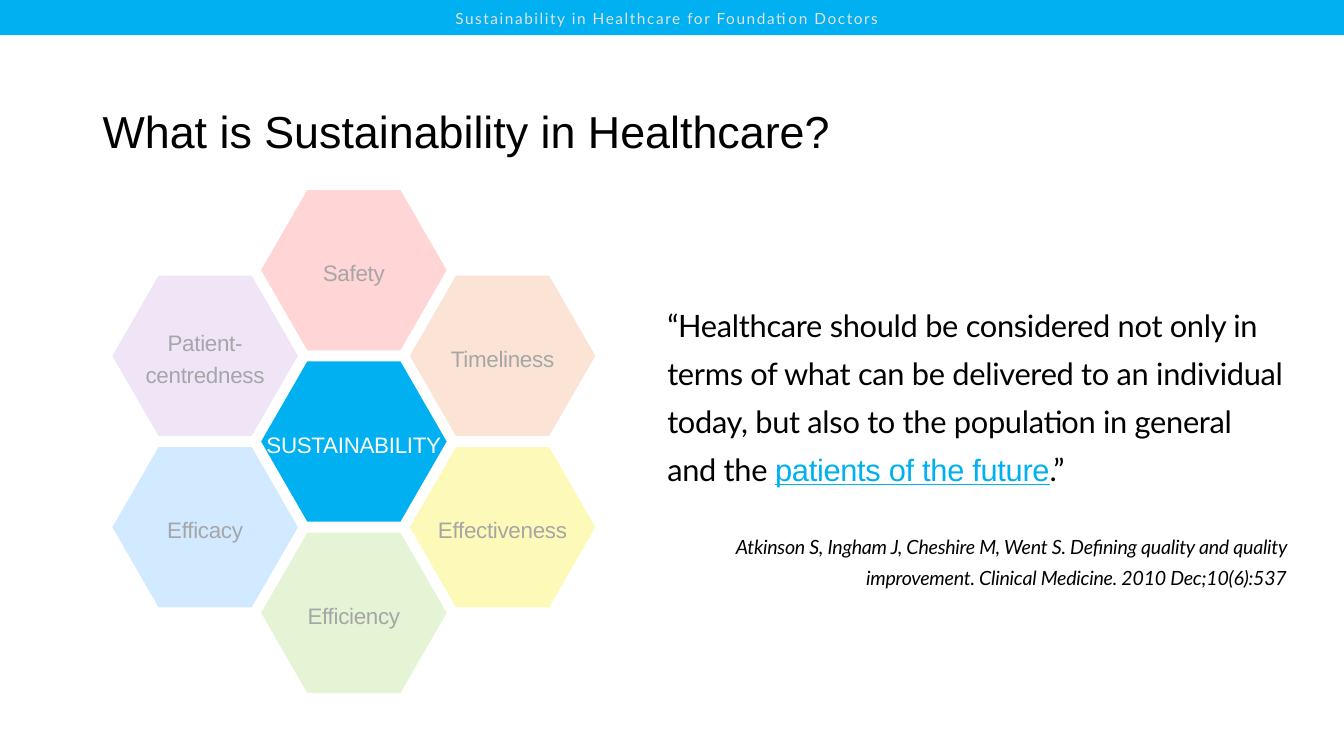
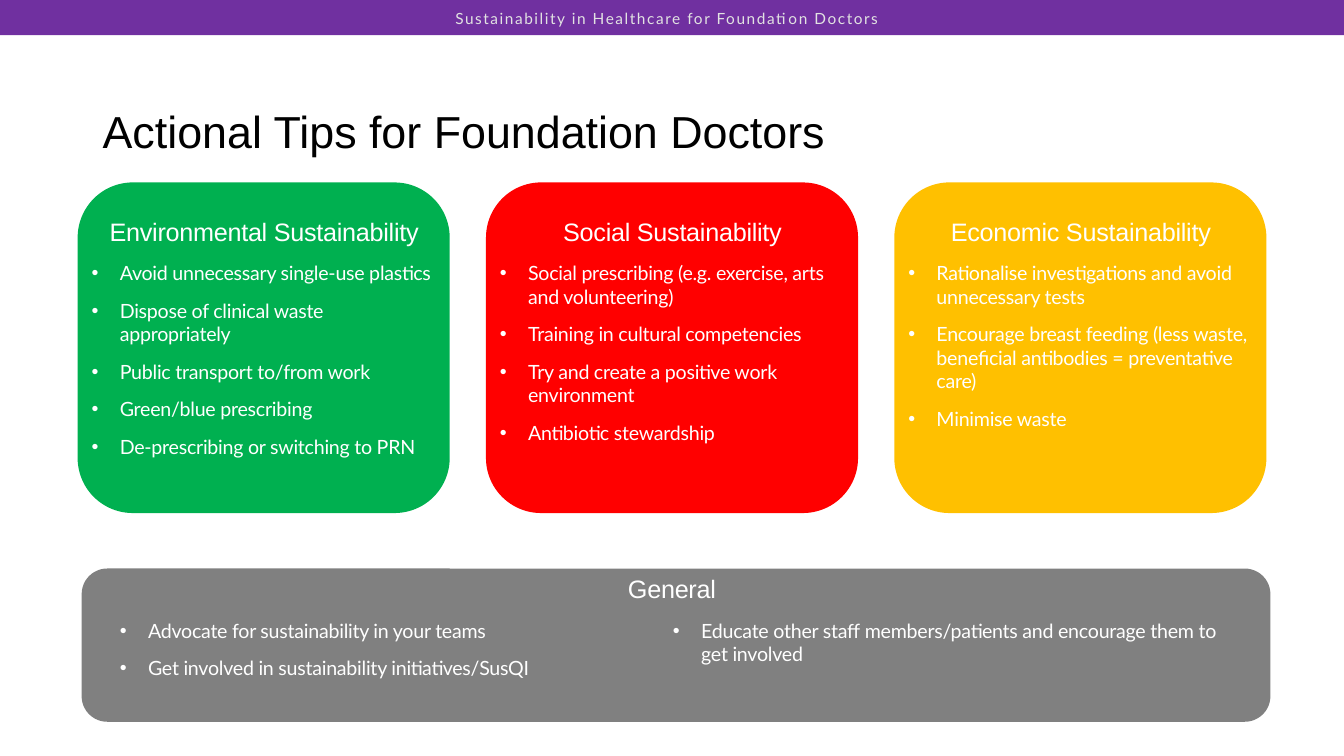
from lxml.etree import SubElement
from pptx import Presentation
from pptx.dml.color import RGBColor
from pptx.enum.shapes import MSO_SHAPE
from pptx.enum.text import MSO_ANCHOR, PP_ALIGN
from pptx.oxml.ns import qn
from pptx.util import Inches, Pt

COLORS = {
    "black": "000000", "white": "FFFFFF", "band_text": "E2E2E2", "label": "A6A6A6",
    "blue": "00B0F0", "purple": "7030A0", "green": "00B050", "red": "FF0000",
    "amber": "FFC000", "grey": "808080", "pale_blue": "D1EAFF",
    "pale_orange": "FBE4D5", "pale_green": "E5F4D4", "pale_yellow": "FDFAB9",
    "pale_purple": "EFE5F7", "pale_red": "FFD5D5",
}
SANS, BODY = "Arial", "Lato"
SLIDE_W, SLIDE_H = 13.33, 7.5
TIGHT = -0.2

BAND_TEXT = "Sustainability in Healthcare for Foundation Doctors"

# label, fill, text colour, column and half-row steps from the centre
HEXAGONS = [
    ("SUSTAINABILITY", "blue", "white", 0, 0),
    ("Efficacy", "pale_blue", "label", -1, 1),
    ("Timeliness", "pale_orange", "label", 1, -1),
    ("Efficiency", "pale_green", "label", 0, 2),
    ("Effectiveness", "pale_yellow", "label", 1, 1),
    ("Patient-\ncentredness", "pale_purple", "label", -1, -1),
    ("Safety", "pale_red", "label", 0, -2),
]
HEX_W, HEX_H = 1.84, 1.59
HEX_CENTRE_X, HEX_CENTRE_Y = 3.51, 4.38
HEX_STEP_X, HEX_STEP_Y = 1.475, 0.85

QUOTE = [
    ("“Healthcare should be considered not only in terms of what can be delivered "
     "to an individual today, but also to the population in general and the ",
     BODY, "black", False),
    ("patients of the future", SANS, "blue", True),
    (".”", BODY, "black", False),
]
CITATION = ("Atkinson S, Ingham J, Cheshire M, Went S. Defining quality and quality "
            "improvement. Clinical Medicine. 2010 Dec;10(6):537")

CARDS = [
    ("Environmental Sustainability", "green", [
        "Avoid unnecessary single-use plastics",
        "Dispose of clinical waste appropriately",
        "Public transport to/from work",
        "Green/blue prescribing",
        "De-prescribing or switching to PRN",
    ]),
    ("Social Sustainability", "red", [
        "Social prescribing (e.g. exercise, arts and volunteering)",
        "Training in cultural competencies",
        "Try and create a positive work environment",
        "Antibiotic stewardship",
    ]),
    ("Economic Sustainability", "amber", [
        "Rationalise investigations and avoid unnecessary tests",
        "Encourage breast feeding (less waste, beneficial antibodies = preventative care)",
        "Minimise waste",
    ]),
]
CARD_LEFT, CARD_TOP, CARD_W, CARD_H, CARD_STEP = 0.77, 1.81, 3.69, 3.28, 4.05

GENERAL = [
    "Advocate for sustainability in your teams",
    "Get involved in sustainability initiatives/SusQI",
    "Educate other staff members/patients and encourage them to get involved",
]


def rgb(name):
    return RGBColor.from_string(COLORS[name])


def add_filled(s, kind, box, fill):
    sp = s.shapes.add_shape(kind, *map(Inches, box))
    sp.shadow.inherit = False
    sp.fill.solid()
    sp.fill.fore_color.rgb = rgb(fill)
    sp.line.fill.background()
    return sp


def add_text_frame(s, box):
    tf = s.shapes.add_textbox(*map(Inches, box)).text_frame
    tf.word_wrap = True
    return tf


def next_paragraph(tf, space_before=0):
    """Return the unused first paragraph, or a new one with space before it."""
    if not tf.paragraphs[0].runs:
        return tf.paragraphs[0]
    p = tf.add_paragraph()
    p.space_before = Pt(space_before)
    return p


def add_run(p, text, size, font, color, spacing=0):
    r = p.add_run()
    r.text = text
    r.font.size = Pt(size)
    r.font.name = font
    r.font.color.rgb = rgb(color)
    if spacing:
        r.font._element.set("spc", str(round(spacing * 100)))
    return r


def add_heading(tf, text):
    p = next_paragraph(tf)
    p.alignment = PP_ALIGN.CENTER
    add_run(p, text, 18, SANS, "white", TIGHT)


def add_bullets(tf, items):
    for item in items:
        p = next_paragraph(tf, 10)
        pPr = p._p.get_or_add_pPr()
        pPr.set("marL", str(Inches(0.28)))
        pPr.set("indent", str(-Inches(0.28)))
        SubElement(pPr, qn("a:buFont")).set("typeface", SANS)
        SubElement(pPr, qn("a:buChar")).set("char", "•")
        add_run(p, item, 14, BODY, "white", TIGHT)


def add_base_slide(prs, title, band_color):
    """Add a blank slide with the top band and the title."""
    s = prs.slides.add_slide(prs.slide_layouts[6])
    tf = add_filled(s, MSO_SHAPE.RECTANGLE, (0, 0, SLIDE_W, 0.35), band_color).text_frame
    tf.margin_left = tf.margin_bottom = 0
    tf.margin_right, tf.margin_top = Inches(0.1), Inches(0.04)
    tf.vertical_anchor = MSO_ANCHOR.MIDDLE
    p = tf.paragraphs[0]
    p.alignment, p.line_spacing = PP_ALIGN.CENTER, 0.9
    add_run(p, BAND_TEXT, 11, BODY, "band_text", 1.1)

    tf = add_text_frame(s, (0.92, 0.85, 11.5, 0.96))
    tf.vertical_anchor = MSO_ANCHOR.MIDDLE
    p = tf.paragraphs[0]
    p.line_spacing = 0.9
    add_run(p, title, 32, SANS, "black")
    return s


def add_hexagon(s, label, fill, text_color, column, half_row):
    left = HEX_CENTRE_X + column * HEX_STEP_X - HEX_W / 2
    top = HEX_CENTRE_Y + half_row * HEX_STEP_Y - HEX_H / 2
    sp = add_filled(s, MSO_SHAPE.HEXAGON, (left, top, HEX_W, HEX_H), fill)
    sp.adjustments[0] = 0.288
    tf = sp.text_frame
    tf.word_wrap = False
    tf.vertical_anchor = MSO_ANCHOR.MIDDLE
    p = tf.paragraphs[0]
    p.alignment, p.line_spacing = PP_ALIGN.CENTER, 1.2
    for i, line in enumerate(label.split("\n")):
        if i:
            p.add_line_break()
        add_run(p, line, 16, SANS, text_color, TIGHT)


def build_definition(prs):
    s = add_base_slide(prs, "What is Sustainability in Healthcare?", "blue")
    for hexagon in HEXAGONS:
        add_hexagon(s, *hexagon)

    tf = add_text_frame(s, (6.52, 2.88, 6.34, 4.06))
    p = next_paragraph(tf)
    p.line_spacing, p.space_after = 1.3, Pt(8)
    for text, font, color, underline in QUOTE:
        r = add_run(p, text, 22, font, color, TIGHT)
        r.font.underline = underline
    p = next_paragraph(tf, 21)
    p.alignment, p.line_spacing = PP_ALIGN.RIGHT, 1.3
    add_run(p, CITATION, 14, BODY, "black", TIGHT).font.italic = True


def build_tips(prs):
    s = add_base_slide(prs, "Actional Tips for Foundation Doctors", "purple")
    for i, (heading, fill, tips) in enumerate(CARDS):
        left = CARD_LEFT + i * CARD_STEP
        add_filled(s, MSO_SHAPE.ROUNDED_RECTANGLE, (left, CARD_TOP, CARD_W, CARD_H), fill)
        tf = add_text_frame(s, (left + 0.04, 2.1, 3.62, 2.91))
        add_heading(tf, heading)
        add_bullets(tf, tips)

    add_filled(s, MSO_SHAPE.ROUNDED_RECTANGLE, (0.81, 5.64, 11.79, 1.52), "grey")
    add_heading(add_text_frame(s, (3.33, 5.64, 6.67, 0.4)), "General")
    tf = add_text_frame(s, (1.09, 6.09, 11.17, 0.75))
    tf._txBody.bodyPr.set("numCol", "2")
    add_bullets(tf, GENERAL)


def main():
    prs = Presentation()
    prs.slide_width, prs.slide_height = Inches(SLIDE_W), Inches(SLIDE_H)
    build_definition(prs)
    build_tips(prs)
    prs.save("out.pptx")


if __name__ == "__main__":
    main()
